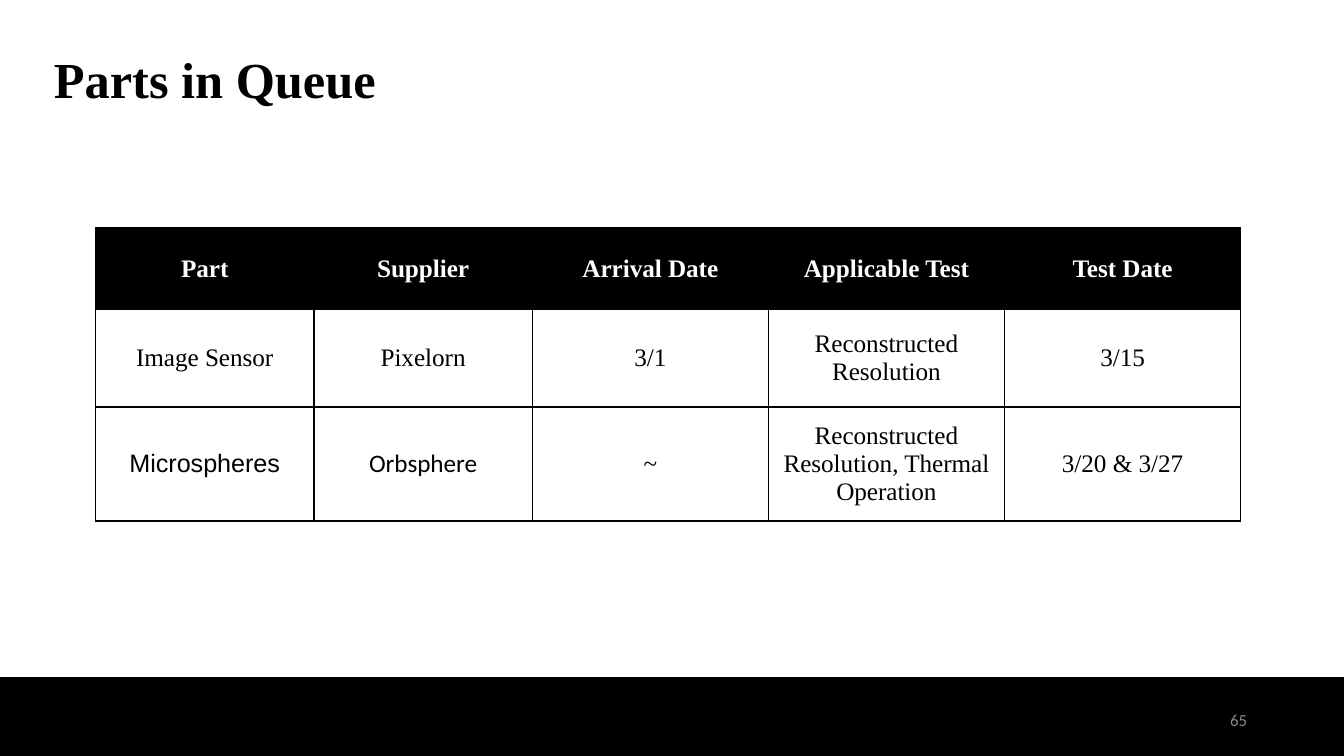
from lxml.etree import SubElement
from pptx import Presentation
from pptx.dml.color import RGBColor
from pptx.enum.shapes import MSO_SHAPE as Shape
from pptx.enum.text import MSO_ANCHOR as Anchor, PP_ALIGN as Align
from pptx.oxml.ns import qn
from pptx.util import Pt

SERIF = "Times New Roman"
BLACK, WHITE, GREY = "000000", "FFFFFF", "888888"

COLUMN_WIDTHS = [117, 117, 126.5, 126.5, 126.5]
ROW_HEIGHTS = [43.6, 52.2, 61.2]
ROWS = [
    ["Part", "Supplier", "Arrival Date", "Applicable Test", "Test Date"],
    ["Image Sensor", "Pixelorn", "3/1", "Reconstructed Resolution", "3/15"],
    ["Microspheres", "Orbsphere", "~",
     "Reconstructed Resolution, Thermal Operation", "3/20 & 3/27"],
]
CELL_FONTS = {"Microspheres": "Arial", "Orbsphere": "Calibri"}


def color(hex_string):
    return RGBColor.from_string(hex_string)


def fill_solid(target, hex_string):
    target.fill.solid()
    target.fill.fore_color.rgb = color(hex_string)


def add_run(paragraph, text, size, font_name, hex_string, bold=False):
    run = paragraph.add_run()
    run.text = text
    run.font.size = Pt(size)
    run.font.name = font_name
    run.font.bold = bold
    run.font.color.rgb = color(hex_string)


def add_text(slide, box, text, size, font_name, hex_string, bold=False,
             align=Align.LEFT, anchor=Anchor.TOP, line_spacing=1.0):
    frame = slide.shapes.add_textbox(*map(Pt, box)).text_frame
    frame.word_wrap = True
    frame.vertical_anchor = anchor
    frame.margin_left = frame.margin_right = Pt(7.2)
    frame.margin_top = frame.margin_bottom = Pt(7.2)
    paragraph = frame.paragraphs[0]
    paragraph.alignment = align
    paragraph.line_spacing = line_spacing
    add_run(paragraph, text, size, font_name, hex_string, bold)


def add_footer_bar(slide):
    bar = slide.shapes.add_shape(Shape.RECTANGLE, Pt(0), Pt(363), Pt(720), Pt(42))
    bar.shadow.inherit = False
    fill_solid(bar, BLACK)
    bar.line.color.rgb = color(BLACK)
    bar.line.width = Pt(1)


def set_borders(cell, hex_string, width):
    """Draw all four edges; they must come before the fill in the cell XML."""
    properties = cell._tc.get_or_add_tcPr()
    for index, edge in enumerate(("lnL", "lnR", "lnT", "lnB")):
        line = SubElement(properties, qn(f"a:{edge}"), w=str(Pt(width)))
        properties.insert(index, line)
        solid = SubElement(line, qn("a:solidFill"))
        SubElement(solid, qn("a:srgbClr"), val=hex_string)


def fill_cell(cell, text, is_header):
    fill_solid(cell, BLACK if is_header else WHITE)
    set_borders(cell, BLACK, 1)
    cell.vertical_anchor = Anchor.MIDDLE
    cell.margin_left = cell.margin_right = Pt(7.2)
    cell.margin_top = cell.margin_bottom = Pt(3.6)
    paragraph = cell.text_frame.paragraphs[0]
    paragraph.alignment = Align.CENTER
    add_run(paragraph, text, 13.5, CELL_FONTS.get(text, SERIF),
            WHITE if is_header else BLACK, is_header)


def add_parts_table(slide):
    frame = slide.shapes.add_table(
        len(ROWS), len(COLUMN_WIDTHS), Pt(51.2), Pt(122.2),
        Pt(sum(COLUMN_WIDTHS)), Pt(sum(ROW_HEIGHTS)))
    table = frame.table
    table.horz_banding = False
    for column, width in zip(table.columns, COLUMN_WIDTHS):
        column.width = Pt(width)
    for row_index, (row, height) in enumerate(zip(table.rows, ROW_HEIGHTS)):
        row.height = Pt(height)
        for cell, text in zip(row.cells, ROWS[row_index]):
            fill_cell(cell, text, row_index == 0)


def main():
    presentation = Presentation()
    presentation.slide_width, presentation.slide_height = Pt(720), Pt(405)
    slide = presentation.slides.add_slide(presentation.slide_layouts[6])
    add_footer_bar(slide)
    add_text(slide, (21.8, 22.4, 671, 45.4), "Parts in Queue", 27, SERIF, BLACK,
             bold=True, line_spacing=0.9)
    add_text(slide, (632, 370, 43.2, 31), "65", 9, "Calibri", GREY,
             align=Align.RIGHT, anchor=Anchor.MIDDLE)
    add_parts_table(slide)
    presentation.save("out.pptx")


if __name__ == "__main__":
    main()
